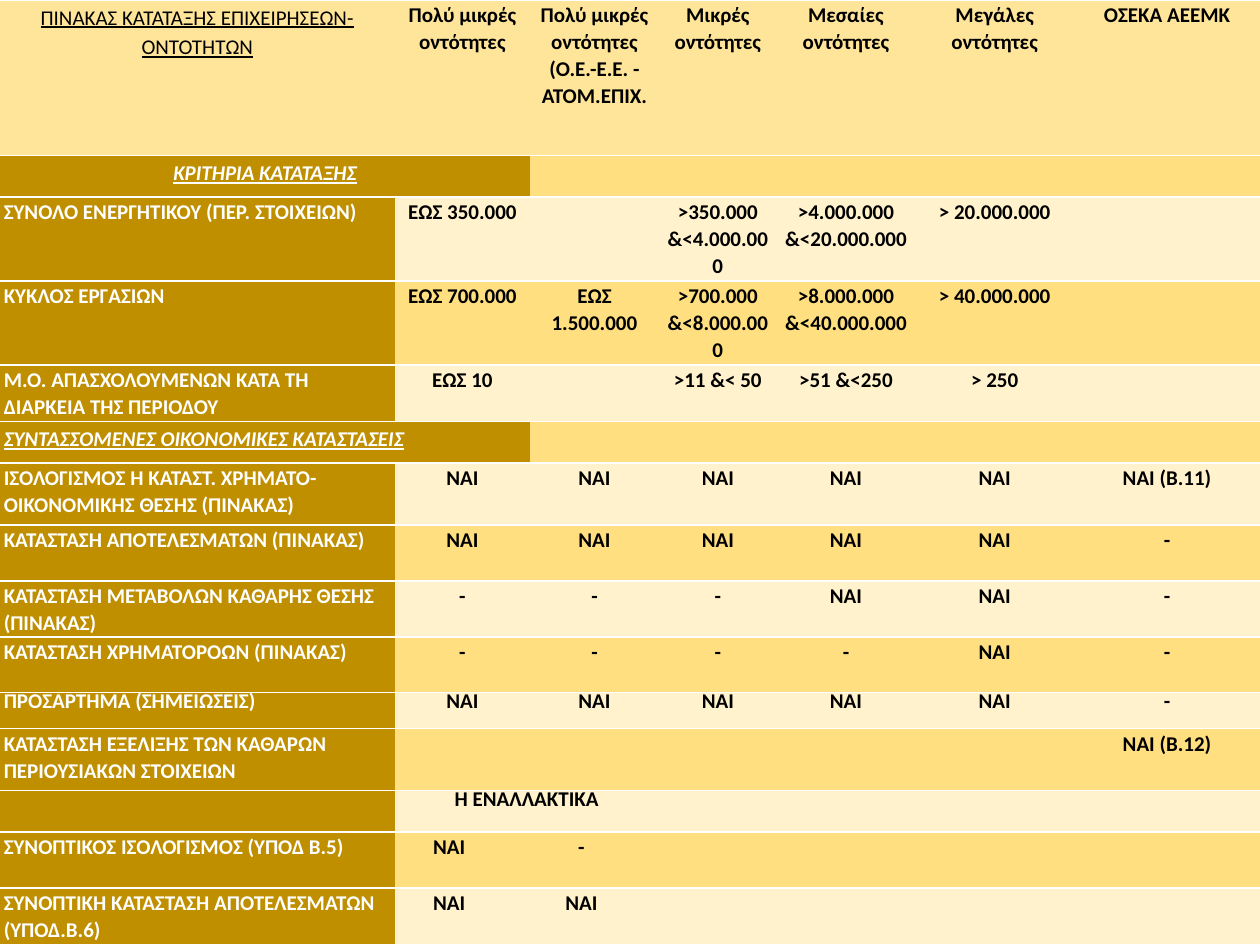
from pptx import Presentation
from pptx.dml.color import RGBColor
from pptx.enum.text import PP_ALIGN
from pptx.oxml import parse_xml
from pptx.oxml.ns import nsdecls
from pptx.util import Pt

HUES = {"page": "EBF1DE", "head": "FFE599", "label": "BF8F00", "dark": "FFDF80",
        "light": "FFF2CC", "white": "FFFFFF", "black": "000000"}
PLAIN = "{2D5ABB26-0587-4C30-8999-92F81FD0307C}"
WIDTHS = [225.5, 62.5, 15, 73.5, 67.5, 79, 91, 106]
YES, NO, SPAN = "ΝΑΙ", "-", None
SECTS = (1, 5)
TIGHT = (10, 12)
ROWS = [
    (89, ["ΠΙΝΑΚΑΣ ΚΑΤΑΤΑΞΗΣ ΕΠΙΧΕΙΡΗΣΕΩΝ-ΟΝΤΟΤΗΤΩΝ", "Πολύ μικρές οντότητες", SPAN,
          "Πολύ μικρές οντότητες (Ο.Ε.-Ε.Ε. - ΑΤΟΜ.ΕΠΙΧ.", "Μικρές οντότητες",
          "Μεσαίες οντότητες", "Μεγάλες οντότητες", "ΟΣΕΚΑ ΑΕΕΜΚ"]),
    (23.5, ["ΚΡΙΤΗΡΙΑ ΚΑΤΑΤΑΞΗΣ", SPAN, SPAN, "", "", "", "", ""]),
    (48, ["ΣΥΝΟΛΟ ΕΝΕΡΓΗΤΙΚΟΥ (ΠΕΡ. ΣΤΟΙΧΕΙΩΝ)", "ΕΩΣ 350.000", SPAN, "",
          ">350.000 &<4.000.000", ">4.000.000 &<20.000.000", "> 20.000.000", ""]),
    (48, ["ΚΥΚΛΟΣ ΕΡΓΑΣΙΩΝ", "ΕΩΣ 700.000", SPAN, "ΕΩΣ 1.500.000",
          ">700.000 &<8.000.000", ">8.000.000 &<40.000.000", "> 40.000.000", ""]),
    (32.5, ["Μ.Ο. ΑΠΑΣΧΟΛΟΥΜΕΝΩΝ ΚΑΤΆ ΤΗ ΔΙΑΡΚΕΙΑ ΤΗΣ ΠΕΡΙΟΔΟΥ", "ΕΩΣ 10", SPAN, "",
            ">11 &< 50", ">51 &<250", "> 250", ""]),
    (23.5, ["ΣΥΝΤΑΣΣΟΜΕΝΕΣ ΟΙΚΟΝΟΜΙΚΕΣ ΚΑΤΑΣΤΑΣΕΙΣ", SPAN, SPAN, "", "", "", "", ""]),
    (35.5, ["ΙΣΟΛΟΓΙΣΜΟΣ Ή ΚΑΤΑΣΤ. ΧΡΗΜΑΤΟ-ΟΙΚΟΝΟΜΙΚΗΣ ΘΕΣΗΣ (ΠΙΝΑΚΑΣ)",
            YES, SPAN, YES, YES, YES, YES, "ΝΑΙ (Β.11)"]),
    (32, ["ΚΑΤΑΣΤΑΣΗ ΑΠΟΤΕΛΕΣΜΑΤΩΝ (ΠΙΝΑΚΑΣ)", YES, SPAN, YES, YES, YES, YES, NO]),
    (32, ["ΚΑΤΑΣΤΑΣΗ ΜΕΤΑΒΟΛΩΝ ΚΑΘΑΡΗΣ ΘΕΣΗΣ (ΠΙΝΑΚΑΣ)",
          NO, SPAN, NO, NO, YES, YES, NO]),
    (32, ["ΚΑΤΑΣΤΑΣΗ ΧΡΗΜΑΤΟΡΟΩΝ (ΠΙΝΑΚΑΣ)", NO, SPAN, NO, NO, NO, YES, NO]),
    (20.5, ["ΠΡΟΣΑΡΤΗΜΑ (ΣΗΜΕΙΩΣΕΙΣ)", YES, SPAN, YES, YES, YES, YES, NO]),
    (35.5, ["ΚΑΤΑΣΤΑΣΗ ΕΞΕΛΙΞΗΣ ΤΩΝ ΚΑΘΑΡΩΝ ΠΕΡΙΟΥΣΙΑΚΩΝ ΣΤΟΙΧΕΙΩΝ",
            "", SPAN, "", "", "", "", "ΝΑΙ (Β.12)"]),
    (23.5, ["", "Ή ΕΝΑΛΛΑΚΤΙΚΑ", SPAN, SPAN, "", "", "", ""]),
    (32, ["ΣΥΝΟΠΤΙΚΟΣ ΙΣΟΛΟΓΙΣΜΟΣ (ΥΠΟΔ Β.5)", YES, NO, SPAN, "", "", "", ""]),
    (32.5, ["ΣΥΝΟΠΤΙΚΗ ΚΑΤΑΣΤΑΣΗ ΑΠΟΤΕΛΕΣΜΑΤΩΝ (ΥΠΟΔ.Β.6)",
            YES, YES, SPAN, "", "", "", ""]),
]


def tint(fill, hue):
    """Give a fill one solid colour."""
    fill.solid()
    fill.fore_color.rgb = RGBColor.from_string(HUES[hue])


def rule(cell):
    """Draw white lines above and below a cell."""
    for tag in ("lnB", "lnT"):
        line = parse_xml(
            f'<a:{tag} {nsdecls("a")} w="{Pt(1)}"><a:solidFill>'
            f'<a:srgbClr val="{HUES["white"]}"/></a:solidFill></a:{tag}>')
        cell._tc.get_or_add_tcPr().insert(0, line)


def paint(cell, row, col):
    """Set the fill, lines and margins of a cell."""
    if row == 0:
        hue = "head"
    elif col == 0:
        hue = "label"
    else:
        hue = "dark" if row % 2 else "light"
    tint(cell.fill, hue)
    rule(cell)
    cell.margin_left = cell.margin_right = Pt(2.16)
    cell.margin_top, cell.margin_bottom = Pt(0.72), Pt(0)


def write(cell, text, row, col):
    """Put styled text in a cell."""
    cell.text = text
    para = cell.text_frame.paragraphs[0]
    label = col == 0 and row > 0
    title = row == col == 0
    sect = row in SECTS
    para.alignment = PP_ALIGN.LEFT if label and row != 1 else PP_ALIGN.CENTER
    para.line_spacing = Pt(11.5) if row in TIGHT else 1.15 if title or sect else 1.06
    font = para.font
    font.name, font.size = "Calibri", Pt(12)
    font.bold, font.italic, font.underline = not title, sect, title or sect
    font.color.rgb = RGBColor.from_string(HUES["white" if label else "black"])


def fill_row(grid, row, texts):
    """Paint, write and merge the cells of one row."""
    start = 0
    for col, text in enumerate(texts):
        cell = grid.cell(row, col)
        paint(cell, row, col)
        if text is not SPAN:
            start = col
            if text:
                write(cell, text, row, col)
        elif col + 1 == len(texts) or texts[col + 1] is not SPAN:
            grid.cell(row, start).merge(cell)


def add_grid(slide):
    """Add the table that fills the slide."""
    frame = slide.shapes.add_table(len(ROWS), len(WIDTHS), 0, 0, Pt(720), Pt(540))
    grid = frame.table
    grid._tbl.tblPr.find("{*}tableStyleId").text = PLAIN
    grid.horz_banding = False
    for col, width in zip(grid.columns, WIDTHS):
        col.width = Pt(width)
    for row, (height, texts) in enumerate(ROWS):
        grid.rows[row].height = Pt(height)
        fill_row(grid, row, texts)


def main():
    """Build and save the slide."""
    deck = Presentation()
    deck.slide_width, deck.slide_height = Pt(720), Pt(540)
    slide = deck.slides.add_slide(deck.slide_layouts[6])
    tint(slide.background.fill, "page")
    add_grid(slide)
    deck.save("out.pptx")


if __name__ == "__main__":
    main()
